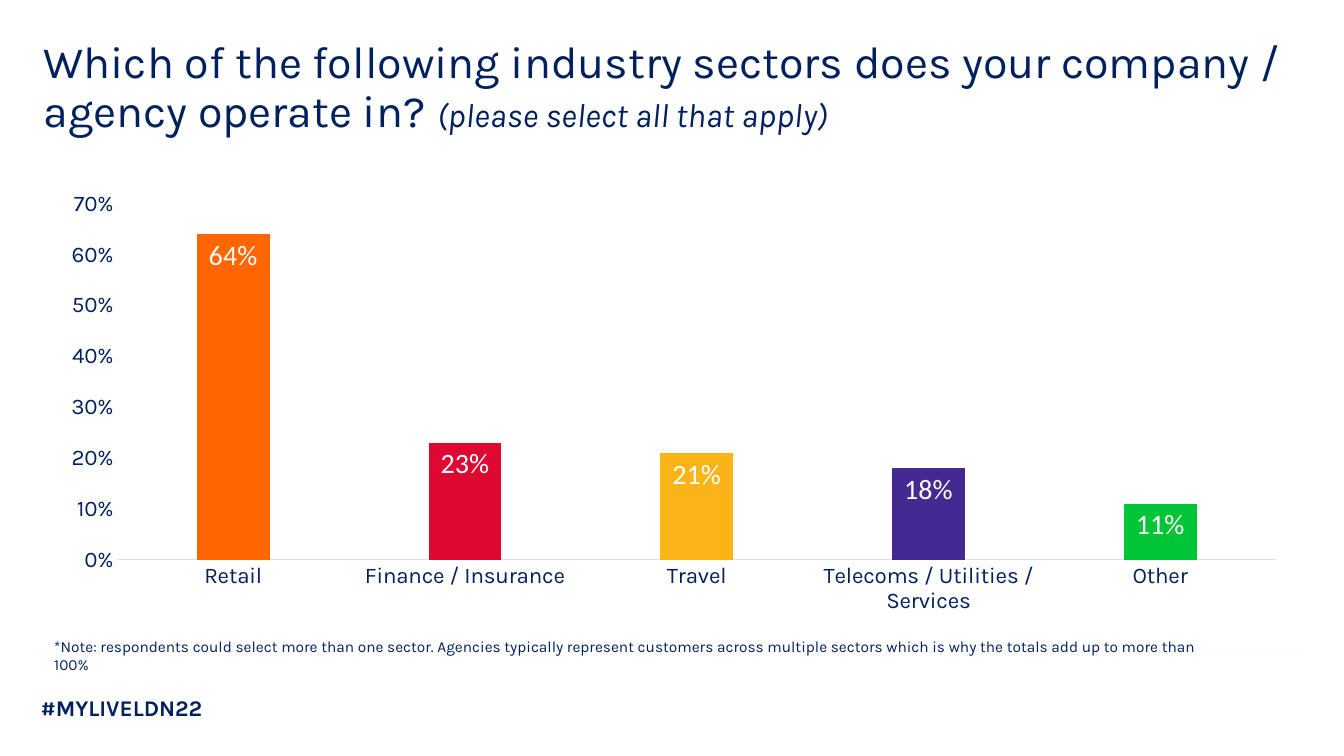
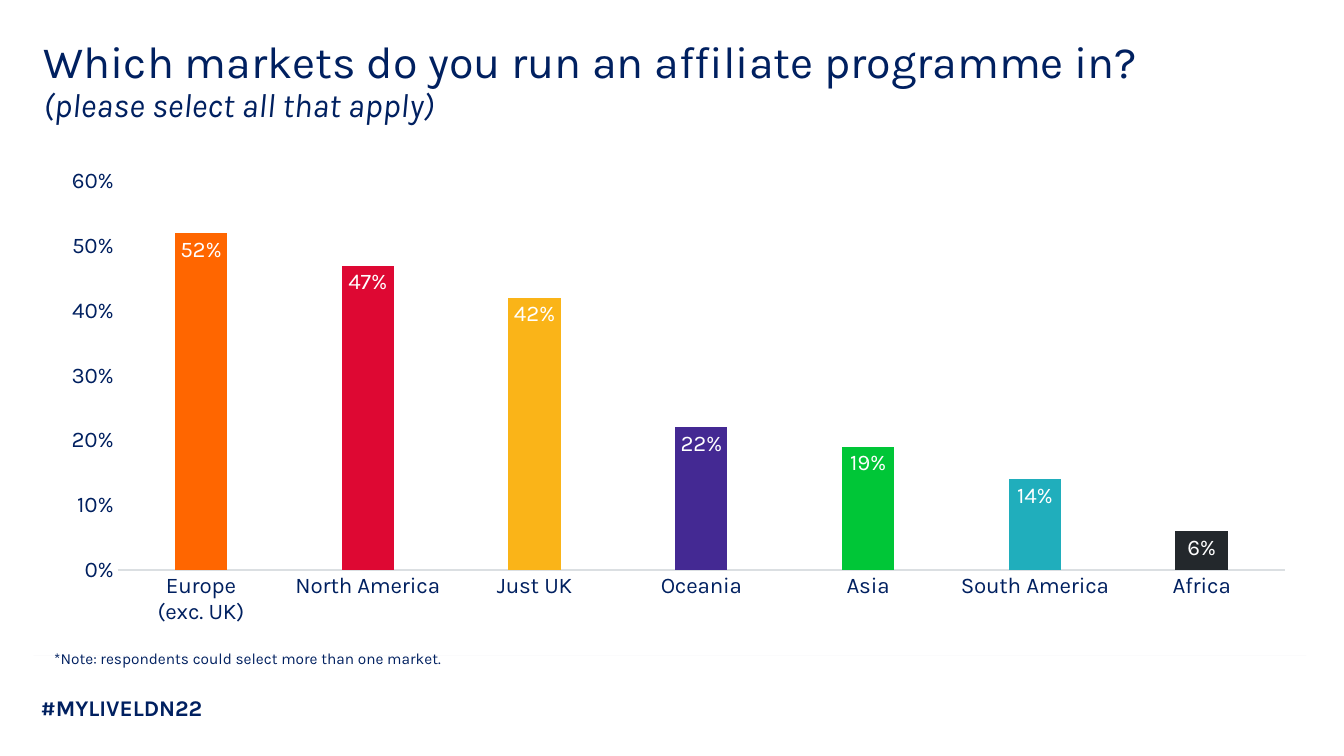
from dataclasses import dataclass
from lxml import etree
from pptx import Presentation
from pptx.chart.data import CategoryChartData
from pptx.dml.color import RGBColor
from pptx.enum.chart import XL_CHART_TYPE, XL_LABEL_POSITION, XL_TICK_MARK
from pptx.enum.shapes import MSO_CONNECTOR
from pptx.oxml.ns import qn
from pptx.util import Pt

COLUMN = XL_CHART_TYPE.COLUMN_CLUSTERED
INSIDE = XL_LABEL_POSITION.INSIDE_END
NO_TICK = XL_TICK_MARK.NONE
STRAIGHT = MSO_CONNECTOR.STRAIGHT


@dataclass(frozen=True)
class Theme:
    navy: str = "002060"
    ink: str = "23282C"
    white: str = "FFFFFF"
    rule: str = "D3D4D6"
    axis: str = "DBDFE2"
    bars: tuple = ("FF6600", "DE0833", "FAB418", "442993", "00C637", "20AEBC", "23282C")
    main: str = "Karla"
    plain: str = "Calibri"
    title: int = 32
    hint: int = 24
    label: int = 16
    large: int = 20
    note: int = 11
    base: int = 10


THEME = Theme()


def rgb(code):
    return RGBColor.from_string(code)


def style(font, size, color=THEME.navy, name=THEME.main, bold=False, italic=False):
    font.size = Pt(size)
    font.name = name
    font.bold = bold
    font.italic = italic
    font.color.rgb = rgb(color)


def write(para, text, **form):
    run = para.add_run()
    run.text = text
    style(run.font, **form)


def add_box(slide, box, pad=(7.2, 3.6)):
    frame = slide.shapes.add_textbox(*map(Pt, box)).text_frame
    frame.word_wrap = True
    frame.margin_left = frame.margin_right = Pt(pad[0])
    frame.margin_top = frame.margin_bottom = Pt(pad[1])
    return frame.paragraphs[0]


def add_title(slide, box, text, hint):
    para = add_box(slide, box)
    para.line_spacing = 0.9
    write(para, text + " ", size=THEME.title)
    write(para, hint, size=THEME.hint, italic=True)


def add_foot(slide, box):
    left, top, width, height = box
    line = slide.shapes.add_connector(
        STRAIGHT, Pt(left), Pt(top), Pt(left + width), Pt(top))
    line.line.width = Pt(0.25)
    line.line.color.rgb = rgb(THEME.rule)
    props = line._element.spPr
    tint = props.find(".//" + qn("a:srgbClr"))
    etree.SubElement(tint, qn("a:alpha")).set("val", "20000")
    etree.SubElement(props, qn("a:effectLst"))
    tag = add_box(slide, (left - 2, top + 24.5, 258, height - 24.5))
    write(tag, "#MYLIVELDN22", size=THEME.label, bold=True)


def add_bars(slide, box, data, top, **form):
    source = CategoryChartData(number_format="0%")
    source.categories = [name for name, share in data]
    source.add_series("Series 1", [share for name, share in data])
    chart = slide.shapes.add_chart(COLUMN, *map(Pt, box), source).chart
    chart.has_legend = False
    chart.has_title = False
    style(chart.font, THEME.base, THEME.ink, THEME.plain)

    for axis in (chart.category_axis, chart.value_axis):
        axis.has_major_gridlines = False
        axis.major_tick_mark = axis.minor_tick_mark = NO_TICK
        style(axis.tick_labels.font, THEME.label)
    base = chart.category_axis.format.line
    base.color.rgb = rgb(THEME.axis)
    base.width = Pt(0.75)
    scale = chart.value_axis
    scale.format.line.fill.background()
    scale.minimum_scale, scale.maximum_scale, scale.major_unit = 0, top, 0.1
    scale.tick_labels.number_format = "0%"
    scale.tick_labels.number_format_is_linked = False

    plot = chart.plots[0]
    plot.vary_by_categories = False
    plot.gap_width, plot.overlap = 219, -27
    bars = plot.series[0]
    for spot, color in zip(range(len(data)), THEME.bars):
        fill = bars.points[spot].format.fill
        fill.solid()
        fill.fore_color.rgb = rgb(color)
    labels = bars.data_labels
    labels.show_value = True
    labels.position = INSIDE
    labels.number_format = "0%"
    labels.number_format_is_linked = False
    style(labels.font, color=THEME.white, **form)


def add_poll(deck, title, width, chart, data, top, note, drop, **form):
    slide = deck.slides.add_slide(deck.slide_layouts[6])
    add_foot(slide, (24, 468, 909, 51))
    add_title(slide, (24, 25, width, 41), title, "(please select all that apply)")
    add_bars(slide, chart, data, top, **form)
    write(add_box(slide, (33, drop, 848, 62), (5.76, 0)), note, size=THEME.note)


def main():
    deck = Presentation()
    deck.slide_width, deck.slide_height = Pt(960), Pt(540)
    add_poll(
        deck,
        "Which of the following industry sectors does your company / agency operate in?",
        965.5, (33, 130.3, 896.5, 314.6),
        [("Retail", 0.64), ("Finance / Insurance", 0.23), ("Travel", 0.21),
         ("Telecoms / Utilities / Services", 0.18), ("Other", 0.11)],
        0.7,
        "*Note: respondents could select more than one sector. Agencies typically "
        "represent customers across multiple sectors which is why the totals add up "
        "to more than 100%",
        455, size=THEME.large, name=THEME.plain)
    add_poll(
        deck, "Which markets do you run an affiliate programme in?",
        856, (33, 113.8, 903, 339),
        [("Europe\n(exc. UK)", 0.52), ("North America", 0.47), ("Just UK", 0.42),
         ("Oceania", 0.22), ("Asia", 0.19), ("South America", 0.14), ("Africa", 0.06)],
        0.6, "*Note: respondents could select more than one market.",
        463.7, size=THEME.label)
    deck.save("out.pptx")


if __name__ == "__main__":
    main()
